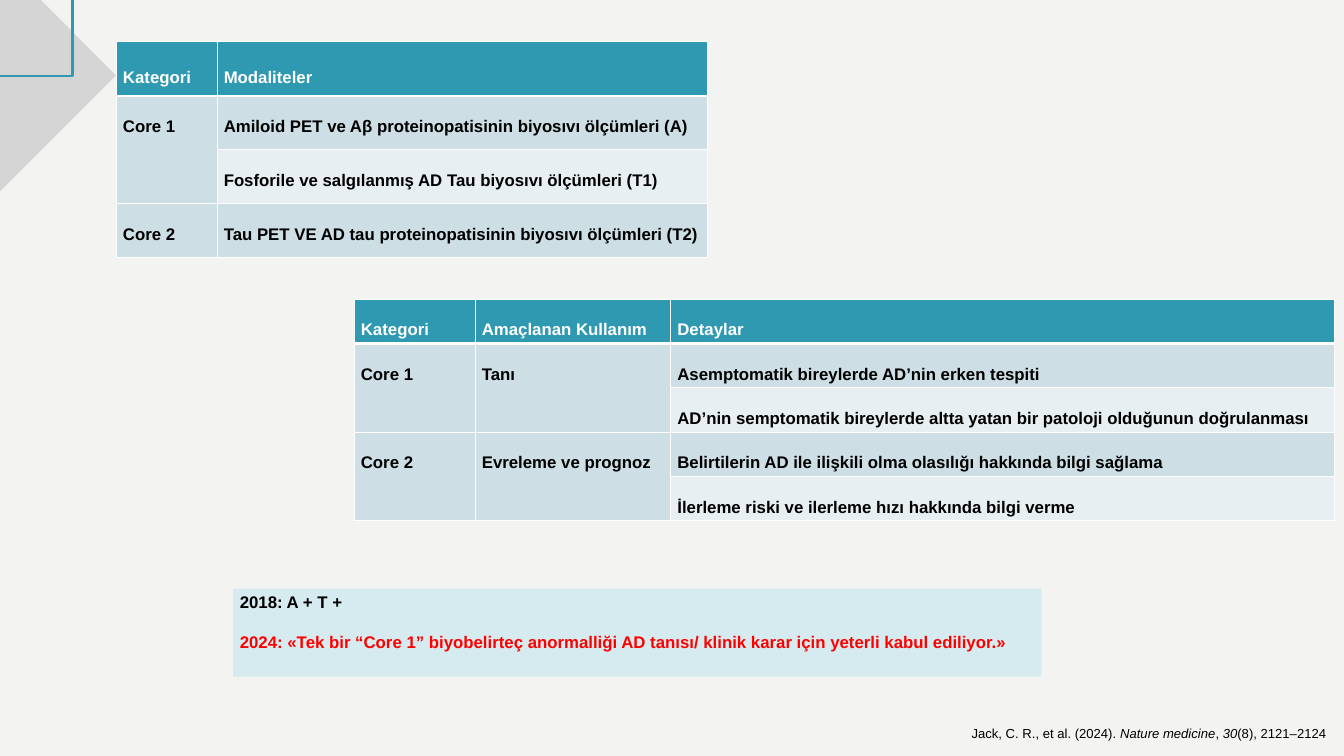
from lxml import etree
from pptx import Presentation
from pptx import util as u
from pptx.dml.color import RGBColor
from pptx.enum import shapes, text
from pptx.oxml.ns import qn

BACKGROUND = RGBColor(0xF3, 0xF4, 0xF1)
TEAL = RGBColor(0x2E, 0x99, 0xB0)
DARK_BAND = RGBColor(0xCD, 0xDE, 0xE4)
LIGHT_BAND = RGBColor(0xE8, 0xEF, 0xF2)
PALE_BLUE = RGBColor(0xD5, 0xEB, 0xEF)
GREY = RGBColor(0xD5, 0xD5, 0xD5)
RED = RGBColor(0xFF, 0, 0)
BLACK = RGBColor(0, 0, 0)
WHITE = RGBColor(0xFF, 0xFF, 0xFF)

MODALITIES = [
    ["Kategori", "Modaliteler"],
    ["Core 1", "Amiloid PET ve Aβ proteinopatisinin biyosıvı ölçümleri (A)"],
    [None, "Fosforile ve salgılanmış AD Tau biyosıvı ölçümleri (T1)"],
    ["Core 2", "Tau PET VE AD tau proteinopatisinin biyosıvı ölçümleri (T2)"],
]
INTENDED_USES = [
    ["Kategori", "Amaçlanan Kullanım", "Detaylar"],
    ["Core 1", "Tanı", "Asemptomatik bireylerde AD’nin erken tespiti"],
    [None, None, "AD’nin semptomatik bireylerde altta yatan bir patoloji olduğunun doğrulanması"],
    ["Core 2", "Evreleme ve prognoz",
     "Belirtilerin AD ile ilişkili olma olasılığı hakkında bilgi sağlama"],
    [None, None, "İlerleme riski ve ilerleme hızı hakkında bilgi verme"],
]
CRITERIA = [
    ("2018: A + T +", BLACK),
    ("2024: «Tek bir “Core 1” biyobelirteç anormalliği AD tanısı/ klinik karar için "
     "yeterli kabul ediliyor.»", RED),
]
CITATION = [
    ("Jack, C. R., et al. (2024). ", False),
    ("Nature medicine", True),
    (", ", False),
    ("30", True),
    ("(8), 2121–2124", False),
]


class SlideBuilder:
    font_name = "Arial"
    body_size = u.Pt(18)
    citation_size = u.Pt(14)

    def __init__(self, slide):
        self.slide = slide
        slide.background.fill.solid()
        slide.background.fill.fore_color.rgb = BACKGROUND

    def style(self, paragraph, color, size=body_size, bold=True):
        font = paragraph.font
        font.name, font.size, font.bold = self.font_name, size, bold
        font.color.rgb = color

    def rectangle(self, left, top, width, height, fill=None, line=None, rotation=0):
        shape = self.slide.shapes.add_shape(
            shapes.MSO_SHAPE.RECTANGLE, *map(u.Inches, (left, top, width, height)))
        shape.shadow.inherit = False
        shape.rotation = rotation
        if fill is None:
            shape.fill.background()
        else:
            shape.fill.solid()
            shape.fill.fore_color.rgb = fill
        if line is None:
            shape.line.fill.background()
        else:
            shape.line.color.rgb = line
            shape.line.width = u.Pt(3)
        return shape

    def message(self, left, top, width, height, lines):
        frame = self.rectangle(left, top, width, height, PALE_BLUE).text_frame
        frame.word_wrap = True
        frame.vertical_anchor = text.MSO_ANCHOR.TOP
        for index, (words, color) in enumerate(lines):
            paragraph = frame.add_paragraph() if index else frame.paragraphs[0]
            paragraph.text = words
            paragraph.alignment = text.PP_ALIGN.LEFT
            if index:
                paragraph.space_before = u.Pt(21)
            self.style(paragraph, color)

    def citation(self, left, top, width, height, parts):
        box = self.slide.shapes.add_textbox(*map(u.Inches, (left, top, width, height)))
        box.text_frame.word_wrap = True
        paragraph = box.text_frame.paragraphs[0]
        self.style(paragraph, BLACK, self.citation_size, False)
        for words, italic in parts:
            run = paragraph.add_run()
            run.text = words
            run.font.italic = italic

    def borders(self, cell, row):
        properties = cell._tc.get_or_add_tcPr()
        thick = {0: "lnB", 1: "lnT"}.get(row)
        for side in ("lnL", "lnR", "lnT", "lnB"):
            width = u.Pt(3 if side == thick else 1)
            line = etree.SubElement(properties, qn("a:" + side), w=str(int(width)))
            fill = etree.SubElement(line, qn("a:solidFill"))
            etree.SubElement(fill, qn("a:srgbClr"), val=str(WHITE))

    def table(self, left, top, widths, heights, rows, header_anchor):
        frame = self.slide.shapes.add_table(
            len(rows), len(widths), *map(u.Inches, (left, top, sum(widths), sum(heights))))
        table = frame.table
        for column, width in zip(table.columns, widths):
            column.width = u.Inches(width)
        for row, height in zip(table.rows, heights):
            row.height = u.Inches(height)
        for row, values in enumerate(rows):
            for column, words in enumerate(values):
                cell = table.cell(row, column)
                self.borders(cell, row)
                cell.margin_top = cell.margin_bottom = u.Inches(0.04)
                cell.fill.solid()
                band = DARK_BAND if row % 2 else LIGHT_BAND
                cell.fill.fore_color.rgb = band if row else TEAL
                if words is None:
                    table.cell(row - 1, column).merge(cell)
                    continue
                cell.vertical_anchor = text.MSO_ANCHOR.TOP if row else header_anchor
                paragraph = cell.text_frame.paragraphs[0]
                paragraph.text = words
                paragraph.line_spacing = 2.0
                self.style(paragraph, BLACK if row else WHITE)


def main():
    presentation = Presentation()
    presentation.slide_width = u.Inches(20)
    presentation.slide_height = u.Inches(11.25)
    builder = SlideBuilder(presentation.slides.add_slide(presentation.slide_layouts[6]))

    builder.table(1.73, 0.61, [1.5, 7.3], [0.82, 0.8, 0.8, 0.8], MODALITIES,
                  text.MSO_ANCHOR.MIDDLE)
    builder.table(5.27, 4.45, [1.8, 2.91, 9.88], [0.66] * 5, INTENDED_USES,
                  text.MSO_ANCHOR.TOP)
    builder.citation(14.36, 10.75, 5.64, 0.34, CITATION)
    builder.rectangle(-2.16, -0.49, 3.22, 3.22, fill=GREY, rotation=315)
    builder.rectangle(-1.76, -1.71, 2.84, 2.84, line=TEAL)
    builder.message(3.47, 8.76, 12.03, 1.31, CRITERIA)

    presentation.save("out.pptx")


if __name__ == "__main__":
    main()
